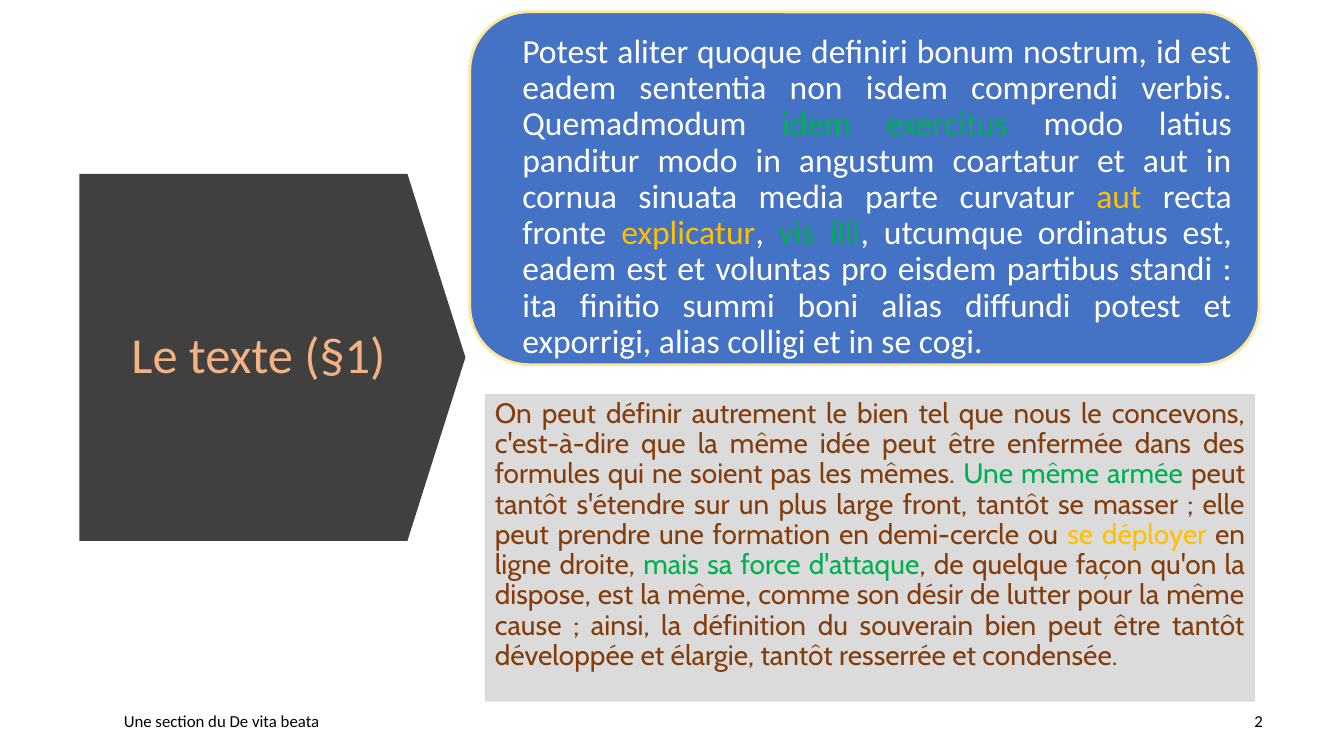
"""Build the slide that sets a Latin passage beside its French translation."""
from dataclasses import dataclass, field

from pptx import Presentation
from pptx import util as u
from pptx.dml.color import RGBColor
from pptx.enum import shapes, text

WHITE, GREEN, GOLD, BROWN = "FFFFFF", "00B050", "FFC000", "843C0B"
ALIGN, ANCHOR = text.PP_ALIGN, text.MSO_ANCHOR
INSET_X, INSET_Y = u.Cm(0.25), u.Cm(0.13)


@dataclass
class Passage:
    runs: list[tuple[str, str]]
    size: float
    font: str = "Calibri"
    frame: dict = field(default_factory=dict)
    paragraph: dict = field(default_factory=dict)


@dataclass
class Panel:
    kind: shapes.MSO_SHAPE
    box: tuple[float, float, float, float]
    fill: str
    line: str = ""
    adjustments: tuple[float, ...] = ()
    rotation: float = 0
    passage: Passage | None = None


@dataclass
class Caption:
    box: tuple[float, float, float, float]
    passage: Passage


BODY = {"alignment": ALIGN.JUSTIFY, "line_spacing": 0.9, "space_before": u.Pt(10)}
MIDDLE = {"vertical_anchor": ANCHOR.MIDDLE}

ARROW = Panel(shapes.MSO_SHAPE.DOWN_ARROW, (2.24, 4.14, 9.25, 9.73), "404040",
              adjustments=(1, 0.158), rotation=270)

LATIN = Panel(
    shapes.MSO_SHAPE.ROUNDED_RECTANGLE, (11.84, 0.3, 19.89, 8.89), "4472C4",
    line="FFE699", adjustments=(0.167,),
    passage=Passage([
        ("Potest aliter quoque definiri bonum nostrum, id est eadem sententia non isdem "
         "comprendi verbis. Quemadmodum ", WHITE),
        ("idem exercitus", GREEN),
        (" modo latius panditur modo in angustum coartatur et aut in cornua sinuata "
         "media parte curvatur ", WHITE),
        ("aut", GOLD),
        (" recta fronte ", WHITE),
        ("explicatur", GOLD),
        (", ", WHITE),
        ("vis illi", GREEN),
        (", utcumque ordinatus est, eadem est et voluntas pro eisdem partibus standi : "
         "ita finitio summi boni alias diffundi potest et porrigi, alias colligi et in "
         "se cogi.".replace("et porrigi", "et exporrigi"), WHITE),
    ], 24, frame={"margin_left": u.Cm(0.89)}, paragraph=BODY))

FRENCH = Panel(
    shapes.MSO_SHAPE.RECTANGLE, (12.22, 9.93, 19.41, 7.75), "DBDBDB",
    passage=Passage([
        ("On peut définir autrement le bien tel que nous le concevons, c'est-à-dire que "
         "la même idée peut être enfermée dans des formules qui ne soient pas les "
         "mêmes. ", BROWN),
        ("Une même armée ", GREEN),
        ("peut tantôt s'étendre sur un plus large front, tantôt se masser ; elle peut "
         "prendre une formation en demi-cercle ou ", BROWN),
        ("se déployer ", GOLD),
        ("en ligne droite, ", BROWN),
        ("mais sa force d'attaque", GREEN),
        (", de quelque façon qu'on la dispose, est la même, comme son désir de lutter "
         "pour la même cause ; ainsi, la définition du souverain bien peut être tantôt "
         "développée et élargie, tantôt resserrée et condensée.", BROWN),
    ], 20, font="Cabin", paragraph=BODY))

HEADING = Caption((2.87, 5.46, 7.29, 7.06), Passage(
    [("Le texte (§1)", "F4B183")], 36, frame=MIDDLE,
    paragraph={"alignment": ALIGN.CENTER, "line_spacing": 0.9}))

FOOTERS = [
    Caption((left, 17.65, width, 1.02), Passage(
        [(wording, "000000")], 12, frame=MIDDLE,
        paragraph={"alignment": align, "space_after": u.Pt(6)}))
    for wording, left, width, align in (
        ("Une section du De vita beata", 2.87, 17.25, ALIGN.LEFT),
        ("2", 30.66, 1.42, ALIGN.RIGHT))
]


def colour(code: str) -> RGBColor:
    return RGBColor.from_string(code)


def lengths(box: tuple[float, ...]) -> list[u.Cm]:
    return [u.Cm(value) for value in box]


def apply(target, values: dict) -> None:
    for name, value in values.items():
        setattr(target, name, value)


def write(frame, passage: Passage) -> None:
    apply(frame, {
        "word_wrap": True, "auto_size": text.MSO_AUTO_SIZE.NONE,
        "vertical_anchor": ANCHOR.TOP,
        "margin_left": INSET_X, "margin_right": INSET_X,
        "margin_top": INSET_Y, "margin_bottom": INSET_Y, **passage.frame})
    paragraph = frame.paragraphs[0]
    apply(paragraph, passage.paragraph)
    for wording, code in passage.runs:
        run = paragraph.add_run()
        run.text = wording
        apply(run.font, {"name": passage.font, "size": u.Pt(passage.size)})
        run.font.color.rgb = colour(code)


def draw_panel(slide, panel: Panel) -> None:
    shape = slide.shapes.add_shape(panel.kind, *lengths(panel.box))
    shape.shadow.inherit = False
    shape.rotation = panel.rotation
    for index, value in enumerate(panel.adjustments):
        shape.adjustments[index] = value
    shape.fill.solid()
    shape.fill.fore_color.rgb = colour(panel.fill)
    if panel.line:
        shape.line.color.rgb = colour(panel.line)
        shape.line.width = u.Pt(2)
    else:
        shape.line.fill.background()
    if panel.passage:
        write(shape.text_frame, panel.passage)


def place_title(slide, caption: Caption) -> None:
    title = slide.shapes.title
    apply(title, dict(zip(("left", "top", "width", "height"), lengths(caption.box))))
    write(title.text_frame, caption.passage)
    title.element.getparent().append(title.element)


def draw_caption(slide, caption: Caption) -> None:
    textbox = slide.shapes.add_textbox(*lengths(caption.box))
    write(textbox.text_frame, caption.passage)


def main() -> None:
    deck = Presentation()
    apply(deck, {"slide_width": u.Cm(33.87), "slide_height": u.Cm(19.05)})
    slide = deck.slides.add_slide(deck.slide_layouts[5])
    for panel in (ARROW, LATIN):
        draw_panel(slide, panel)
    place_title(slide, HEADING)
    draw_panel(slide, FRENCH)
    for footer in FOOTERS:
        draw_caption(slide, footer)
    deck.save("out.pptx")


if __name__ == "__main__":
    main()
